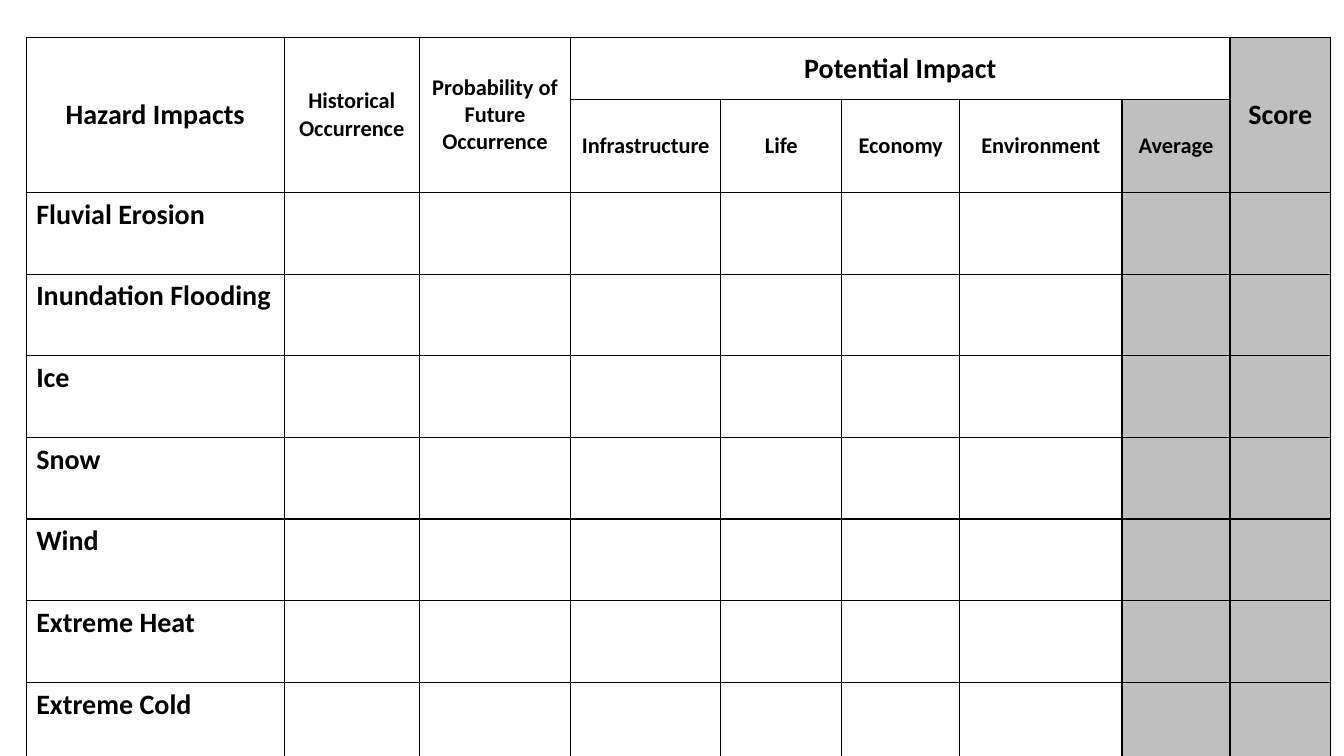
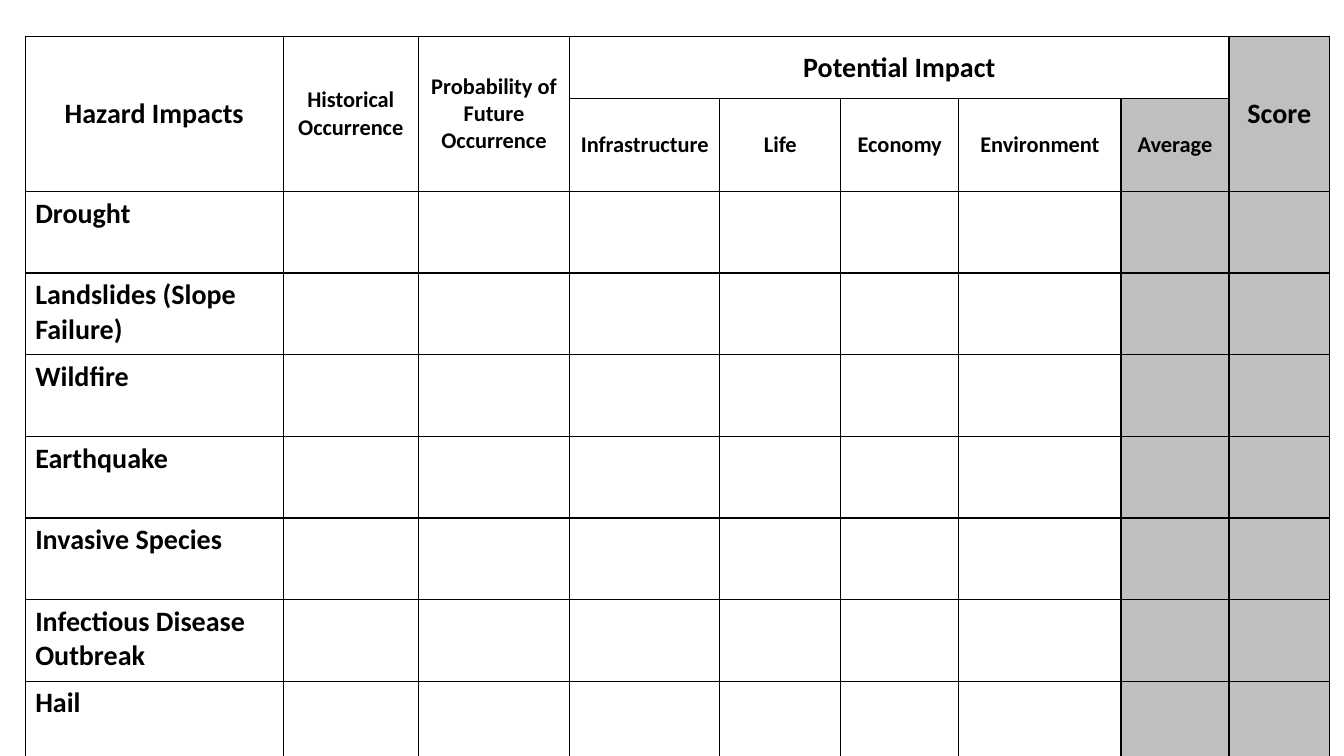
from dataclasses import dataclass

from lxml.etree import SubElement
from pptx import Presentation
from pptx.dml.color import RGBColor
from pptx.enum.text import MSO_ANCHOR as Anchor, PP_ALIGN as Align
from pptx.oxml import parse_xml
from pptx.oxml.ns import nsdecls, qn
from pptx.table import Table, _Cell as Cell
from pptx.util import Inches, Pt

COLORS = {"text": "000000", "border": "000000", "shade": "BFBFBF"}
FONT = "Calibri"
LARGE, SMALL = 20, 16
BORDER_PT = 1

COL_WIDTHS = [2.56, 1.34, 1.5, 1.49, 1.2, 1.17, 1.61, 1.07, 1]
HEADER_HEIGHTS = [0.62, 0.92]
HAZARD_HEIGHT = 0.81
AVERAGE_COL, SCORE_COL = 7, 8


@dataclass(frozen=True)
class Heading:
    text: str
    row: int
    col: int
    size: int = SMALL
    rows: int = 1
    cols: int = 1


@dataclass(frozen=True)
class HazardSlide:
    left: float
    top: float
    hazards: tuple[str, ...]


HEADINGS = [
    Heading("Hazard Impacts", 0, 0, LARGE, rows=2),
    Heading("Historical Occurrence", 0, 1, rows=2),
    Heading("Probability of Future Occurrence", 0, 2, rows=2),
    Heading("Potential Impact", 0, 3, LARGE, cols=5),
    Heading("Score", 0, SCORE_COL, LARGE, rows=2),
    Heading("Infrastructure", 1, 3),
    Heading("Life", 1, 4),
    Heading("Economy", 1, 5),
    Heading("Environment", 1, 6),
    Heading("Average", 1, AVERAGE_COL),
]

SLIDES = [
    HazardSlide(0.26, 0.37, (
        "Fluvial Erosion", "Inundation Flooding", "Ice", "Snow", "Wind",
        "Extreme Heat", "Extreme Cold")),
    HazardSlide(0.25, 0.36, (
        "Drought", "Landslides (Slope Failure)", "Wildfire", "Earthquake",
        "Invasive Species", "Infectious Disease Outbreak", "Hail")),
]


def write(cell: Cell, text: str, *, size: int = LARGE,
          align: Align = Align.LEFT, anchor: Anchor = Anchor.TOP) -> None:
    """Put bold text in a cell."""
    cell.vertical_anchor = anchor
    p = cell.text_frame.paragraphs[0]
    p.alignment = align
    r = p.add_run()
    r.text = text
    r.font.name = FONT
    r.font.size = Pt(size)
    r.font.bold = True
    r.font.color.rgb = RGBColor.from_string(COLORS["text"])


def style_cell(cell: Cell, shaded: bool) -> None:
    """Set the fill and the four borders of a cell."""
    if shaded:
        cell.fill.solid()
        cell.fill.fore_color.rgb = RGBColor.from_string(COLORS["shade"])
    else:
        cell.fill.background()
    tc_pr = cell._tc.get_or_add_tcPr()
    for i, side in enumerate(("lnL", "lnR", "lnT", "lnB")):
        ln = parse_xml(f'<a:{side} {nsdecls("a")} w="{Pt(BORDER_PT)}"/>')
        fill = SubElement(ln, qn("a:solidFill"))
        SubElement(fill, qn("a:srgbClr"), val=COLORS["border"])
        tc_pr.insert(i, ln)


def add_headings(table: Table) -> None:
    for h in HEADINGS:
        cell = table.cell(h.row, h.col)
        if h.rows > 1 or h.cols > 1:
            cell.merge(table.cell(h.row + h.rows - 1, h.col + h.cols - 1))
        write(cell, h.text, size=h.size, align=Align.CENTER,
              anchor=Anchor.MIDDLE)


def add_hazard_slide(prs: Presentation, page: HazardSlide) -> None:
    s = prs.slides.add_slide(prs.slide_layouts[6])
    heights = HEADER_HEIGHTS + [HAZARD_HEIGHT] * len(page.hazards)
    table = s.shapes.add_table(
        len(heights), len(COL_WIDTHS), Inches(page.left), Inches(page.top),
        Inches(sum(COL_WIDTHS)), Inches(sum(heights))).table
    table.first_row = table.horz_banding = False

    # Grid
    for col, width in zip(table.columns, COL_WIDTHS):
        col.width = Inches(width)
    for row, height in zip(table.rows, heights):
        row.height = Inches(height)
    for i in range(len(heights)):
        for j in range(len(COL_WIDTHS)):
            shaded = j == SCORE_COL or (j == AVERAGE_COL and i > 0)
            style_cell(table.cell(i, j), shaded)

    # Text
    add_headings(table)
    for i, hazard in enumerate(page.hazards, len(HEADER_HEIGHTS)):
        write(table.cell(i, 0), hazard)


def main() -> None:
    prs = Presentation()
    prs.slide_width, prs.slide_height = Inches(13.33), Inches(7.5)
    for page in SLIDES:
        add_hazard_slide(prs, page)
    prs.save("out.pptx")


if __name__ == "__main__":
    main()
